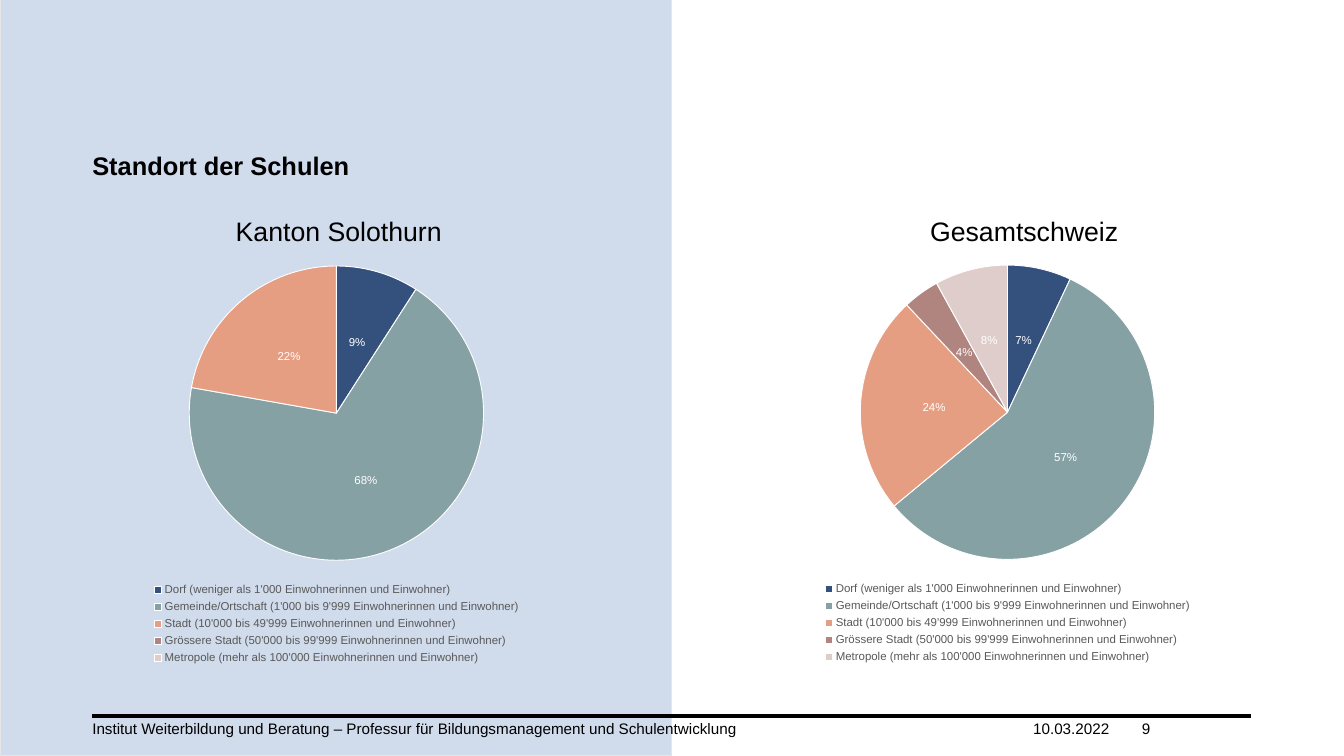
from dataclasses import dataclass

from lxml import etree
from pptx import Presentation
from pptx.chart.data import CategoryChartData
from pptx.dml.color import RGBColor
from pptx.enum.chart import XL_CHART_TYPE, XL_LABEL_POSITION as LabelPosition
from pptx.enum.chart import XL_LEGEND_POSITION as LegendPosition
from pptx.enum.shapes import MSO_CONNECTOR, MSO_SHAPE
from pptx.enum.text import MSO_ANCHOR, MSO_AUTO_SIZE, PP_ALIGN
from pptx.oxml.ns import qn
from pptx.util import Inches, Pt

# Content
TITLE = "Standort der Schulen"
LOCATIONS = [
    "Dorf (weniger als 1'000 Einwohnerinnen und Einwohner)",
    "Gemeinde/Ortschaft (1'000 bis 9'999 Einwohnerinnen und Einwohner)",
    "Stadt (10'000 bis 49'999 Einwohnerinnen und Einwohner)",
    "Grössere Stadt (50'000 bis 99'999 Einwohnerinnen und Einwohner)",
    "Metropole (mehr als 100'000 Einwohnerinnen und Einwohner)",
]
# Heading, heading box, chart position, percentages
REGIONS = [
    ("Kanton Solothurn", (2.42, 2.3, 2.51, 0.45), (0.2, 2.78), (9, 68, 22, 0, 0)),
    ("Gesamtschweiz", (10.03, 2.3, 2.3, 0.45), (7.54, 2.77), (7, 57, 24, 4, 8)),
]
# Footer text, left, width
FOOTER = [
    ("Institut Weiterbildung und Beratung – Professur für "
     "Bildungsmanagement und Schulentwicklung", 1.01, 10.29),
    ("10.03.2022", 11.3, 1.19),
    ("9", 12.49, 1.19),
]

WIDTH, HEIGHT = 14.7, 8.27
LEFT, RIGHT = 1.01, 13.68
CHART_WIDTH, CHART_HEIGHT = 6.96, 4.53
PIE_SIZE, PIE_TOP = 3.22, 0.13


@dataclass(frozen=True)
class Theme:
    font: str = "Arial"
    text: str = "000000"
    panel: str = "D0DBEB"
    panel_line: str = "E6E6E6"
    legend: str = "595959"
    white: str = "FFFFFF"
    slices: tuple = ("34517D", "86A1A3", "E69E83", "B0857F", "DFCDCB")
    title_size: float = 20
    heading_size: float = 21
    footer_size: float = 12
    chart_size: float = 10
    label_size: float = 9


THEME = Theme()


def color(value):
    return RGBColor.from_string(value)


def style_font(font, size, value, bold=False):
    font.name, font.size, font.bold = THEME.font, Pt(size), bold
    font.color.rgb = color(value)


def add_text(slide, text, box, size, bold=False, anchor=MSO_ANCHOR.TOP):
    shape = slide.shapes.add_textbox(*map(Inches, box))
    frame = shape.text_frame
    frame.word_wrap = True
    frame.vertical_anchor = anchor
    frame.margin_left = frame.margin_right = 0
    frame.margin_top = frame.margin_bottom = 0
    run = frame.paragraphs[0].add_run()
    run.text = text
    style_font(run.font, size, THEME.text, bold)
    return frame


def add_heading(slide, text, box):
    frame = add_text(slide, text, box, THEME.heading_size)
    frame.margin_left = frame.margin_right = Inches(0.1)
    frame.margin_top = frame.margin_bottom = Inches(0.05)
    frame.auto_size = MSO_AUTO_SIZE.SHAPE_TO_FIT_TEXT
    frame.paragraphs[0].alignment = PP_ALIGN.RIGHT


def place_pie(chart):
    """Centre the pie above the legend."""
    plot_area = chart.element.find(".//" + qn("c:plotArea"))
    layout = plot_area.find(qn("c:layout"))
    if layout is None:
        layout = etree.Element(qn("c:layout"))
        plot_area.insert(0, layout)
    manual = etree.SubElement(layout, qn("c:manualLayout"))
    settings = {
        "layoutTarget": "inner", "xMode": "edge", "yMode": "edge",
        "x": (CHART_WIDTH - PIE_SIZE) / 2 / CHART_WIDTH,
        "y": PIE_TOP / CHART_HEIGHT,
        "w": PIE_SIZE / CHART_WIDTH, "h": PIE_SIZE / CHART_HEIGHT,
    }
    for name, value in settings.items():
        etree.SubElement(manual, qn("c:" + name)).set("val", str(value))


def add_pie(slide, position, values):
    data = CategoryChartData()
    data.categories = LOCATIONS
    data.add_series("Series 1", values)
    box = map(Inches, (*position, CHART_WIDTH, CHART_HEIGHT))
    chart = slide.shapes.add_chart(XL_CHART_TYPE.PIE, *box, data).chart
    chart.has_title = False
    style_font(chart.font, THEME.chart_size, THEME.text)

    chart.has_legend = True
    chart.legend.position = LegendPosition.BOTTOM
    chart.legend.include_in_layout = False
    style_font(chart.legend.font, THEME.label_size, THEME.legend)

    plot = chart.plots[0]
    plot.vary_by_categories = True
    for index, fill in enumerate(THEME.slices):
        part = plot.series[0].points[index].format
        part.fill.solid()
        part.fill.fore_color.rgb = color(fill)
        part.line.color.rgb = color(THEME.white)
        part.line.width = Pt(0.75)

    # Zero shares get no label
    labels = plot.series[0].data_labels
    labels.show_value = True
    labels.number_format = '0"%";;'
    labels.number_format_is_linked = False
    labels.position = LabelPosition.CENTER
    style_font(labels.font, THEME.label_size, THEME.white)
    place_pie(chart)


def main():
    presentation = Presentation()
    presentation.slide_width = Inches(WIDTH)
    presentation.slide_height = Inches(HEIGHT)
    slide = presentation.slides.add_slide(presentation.slide_layouts[6])

    # Left half panel
    panel = slide.shapes.add_shape(
        MSO_SHAPE.RECTANGLE, 0, 0, Inches(WIDTH / 2), Inches(HEIGHT))
    panel.shadow.inherit = False
    panel.fill.solid()
    panel.fill.fore_color.rgb = color(THEME.panel)
    panel.line.color.rgb = color(THEME.panel_line)
    panel.line.width = Pt(0.75)

    # Footer rule and texts
    rule = slide.shapes.add_connector(
        MSO_CONNECTOR.STRAIGHT, *map(Inches, (LEFT, 7.83, RIGHT, 7.83)))
    rule.line.color.rgb = color(THEME.text)
    rule.line.width = Pt(3)
    etree.SubElement(rule.element.spPr, qn("a:effectLst"))
    for text, left, width in FOOTER:
        add_text(slide, text, (left, 7.87, width, 0.2), THEME.footer_size,
                 anchor=MSO_ANCHOR.BOTTOM)

    # Title and regional charts
    add_text(slide, TITLE, (LEFT, 1.64, RIGHT - LEFT, 0.4),
             THEME.title_size, bold=True)
    for heading, box, position, values in REGIONS:
        add_heading(slide, heading, box)
        add_pie(slide, position, values)

    presentation.save("out.pptx")


if __name__ == "__main__":
    main()
